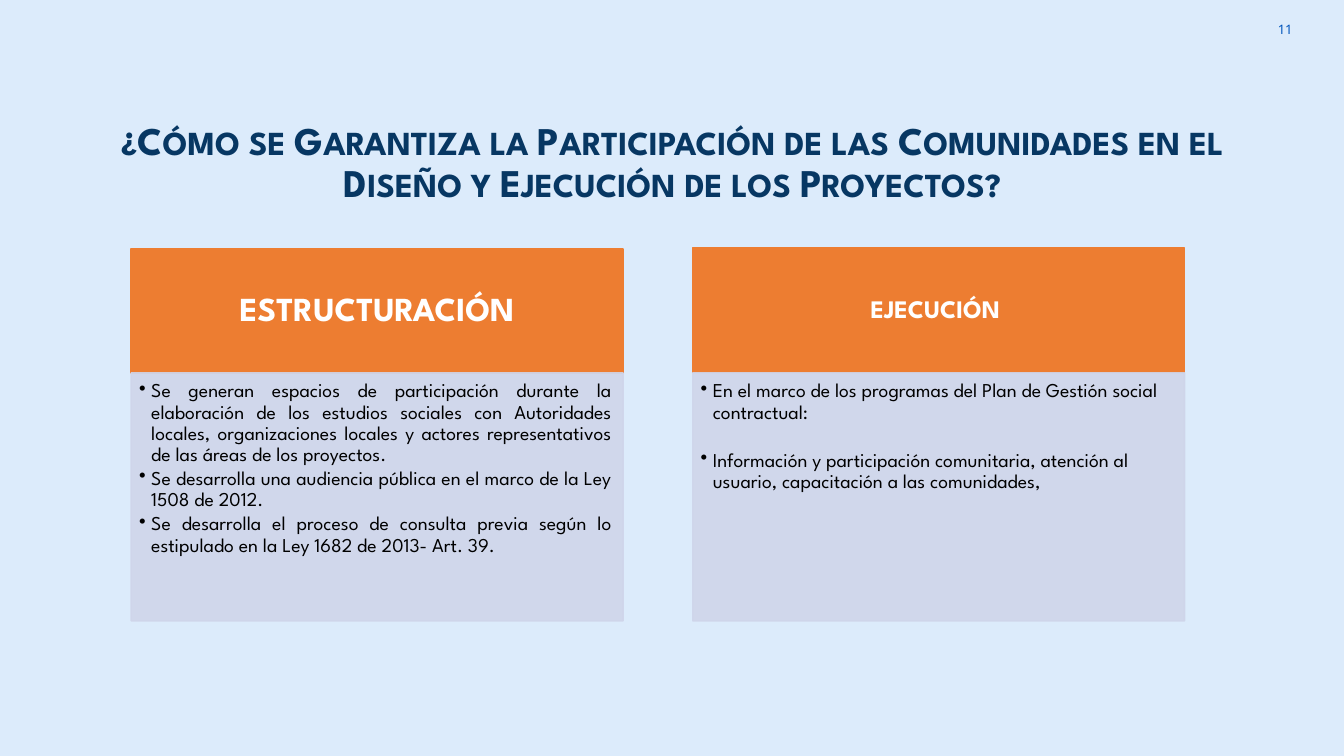
"""Build the slide on community participation in project design and execution."""
from dataclasses import dataclass
from itertools import groupby

from lxml import etree
from pptx import Presentation
from pptx.dml.color import RGBColor
from pptx.enum.shapes import MSO_SHAPE as Shape
from pptx.enum.text import MSO_ANCHOR as Anchor, PP_ALIGN as Align
from pptx.oxml.ns import qn
from pptx.util import Inches, Pt

HEADING_FONT = "League Spartan"
ORANGE, LAVENDER = "ED7D31", "CFD5EA"
CARD_W, HEAD_H, BODY_H, BODY_TOP = 4.88, 1.23, 2.46, 3.7
TITLE = ("¿Cómo se Garantiza la Participación de las Comunidades en el "
         "Diseño y Ejecución de los Proyectos?")


@dataclass
class Card:
    left: float
    top: float
    heading: str
    size: float
    margins: tuple[float, ...]
    align: Align
    gap: float
    bullets: list[str]


CARDS = [
    Card(1.3, 2.47, "ESTRUCTURACIÓN", 24, (0.19, 0.11, 0.19, 0.11), Align.JUSTIFY, 2.1, [
        "Se generan espacios de participación durante la elaboración de los estudios "
        "sociales con Autoridades locales, organizaciones locales y actores "
        "representativos de las áreas de los proyectos.",
        "Se desarrolla una audiencia pública en el marco de la Ley 1508 de 2012.",
        "Se desarrolla el proceso de consulta previa según lo estipulado en la Ley "
        "1682 de 2013- Art. 39.",
    ]),
    Card(6.87, 2.46, "EJECUCIÓN ", 18, (0.14, 0.08, 0.14, 0.08), Align.LEFT, 19.2, [
        "En el marco de los programas del Plan de Gestión social contractual:",
        "Información y participación comunitaria, atención al usuario, capacitación "
        "a las comunidades,",
    ]),
]


def rgb(color: str) -> RGBColor:
    return RGBColor.from_string(color)


def add_run(p, text: str, size: float, color: str, bold: bool = False,
            font: str = HEADING_FONT) -> None:
    r = p.add_run()
    r.text = text
    r.font.size, r.font.bold, r.font.name = Pt(size), bold, font
    r.font.color.rgb = rgb(color)


def set_frame(tf, margins: tuple[float, ...], anchor: Anchor) -> None:
    tf.word_wrap = True
    tf.vertical_anchor = anchor
    tf.margin_left, tf.margin_top, tf.margin_right, tf.margin_bottom = map(Inches, margins)


def add_text(s, box: tuple[float, ...], margins: tuple[float, ...], align: Align):
    tf = s.shapes.add_textbox(*map(Inches, box)).text_frame
    set_frame(tf, margins, Anchor.MIDDLE)
    p = tf.paragraphs[0]
    p.alignment = align
    return p


def add_panel(s, box: tuple[float, ...], color: str, opacity: int = 100):
    sp = s.shapes.add_shape(Shape.RECTANGLE, *map(Inches, box))
    sp.shadow.inherit = False
    sp.fill.solid()
    sp.fill.fore_color.rgb = rgb(color)
    sp.line.color.rgb = rgb(color)
    sp.line.width = Pt(1)
    if opacity < 100:
        for clr in sp.element.spPr.iter(qn("a:srgbClr")):
            etree.SubElement(clr, qn("a:alpha"), val=str(opacity * 1000))
    return sp.text_frame


def add_bullet(p) -> None:
    pPr = p._p.get_or_add_pPr()
    pPr.set("marL", str(Inches(0.12)))
    pPr.set("indent", str(-Inches(0.12)))
    etree.SubElement(pPr, qn("a:buChar"), char="•")


def add_card(s, card: Card) -> None:
    tf = add_panel(s, (card.left, card.top, CARD_W, HEAD_H), ORANGE)
    set_frame(tf, card.margins, Anchor.MIDDLE)
    p = tf.paragraphs[0]
    p.alignment, p.line_spacing = Align.CENTER, 0.9
    add_run(p, card.heading, card.size, "FFFFFF", bold=True)

    tf = add_panel(s, (card.left, BODY_TOP, CARD_W, BODY_H), LAVENDER, 90)
    set_frame(tf, (0.08, 0.08, 0.11, 0.12), Anchor.TOP)
    for i, text in enumerate(card.bullets):
        p = tf.add_paragraph() if i else tf.paragraphs[0]
        p.alignment, p.line_spacing, p.space_after = card.align, 0.9, Pt(card.gap)
        add_bullet(p)
        add_run(p, text, 14, "000000")


def main() -> None:
    prs = Presentation()
    prs.slide_width, prs.slide_height = Inches(13.33), Inches(7.5)
    s = prs.slides.add_slide(prs.slide_layouts[6])
    s.background.fill.solid()
    s.background.fill.fore_color.rgb = rgb("DCEBFB")

    p = add_text(s, (12.15, 0.01, 0.8, 0.57), (0.13,) * 4, Align.RIGHT)
    add_run(p, "11", 9.3, "0054BC", font="Noto Sans")

    p = add_text(s, (0.92, 0.9, 11.5, 1.45), (0.1, 0.05, 0.1, 0.05), Align.CENTER)
    p.line_spacing = 0.9
    for is_capital, letters in groupby(TITLE, str.isupper):
        add_run(p, "".join(letters).upper(), 28 if is_capital else 24, "073763", bold=True)

    for card in CARDS:
        add_card(s, card)
    prs.save("out.pptx")


if __name__ == "__main__":
    main()
